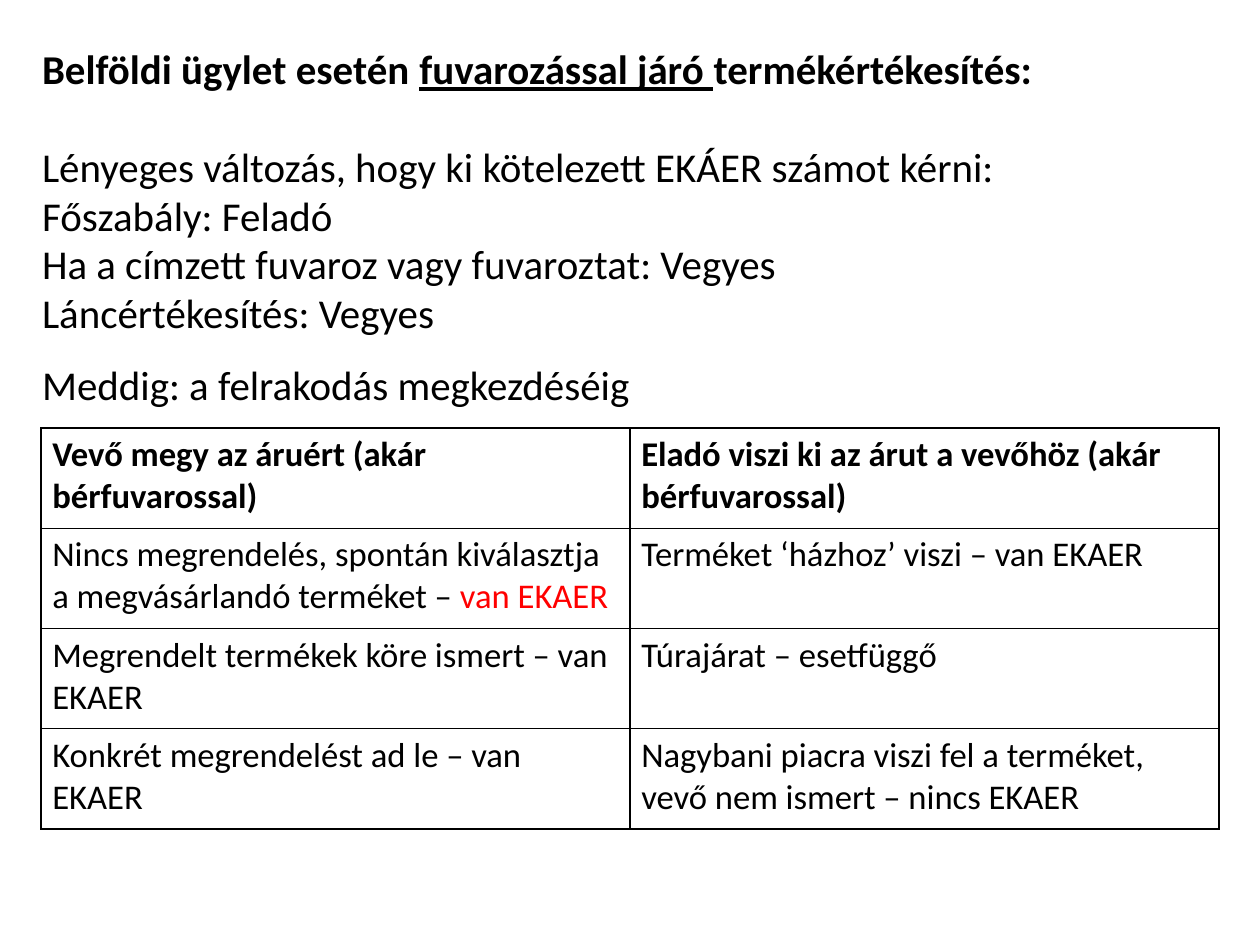
"""Build the slide on who must request an EKÁER number for domestic sales."""
from lxml import etree
from pptx import Presentation
from pptx import util as u
from pptx.dml.color import RGBColor
from pptx.enum import text
from pptx.oxml.ns import qn

PX = 914400 / 113.4
COLORS = {"ink": "000000", "accent": "FF0000", "paper": "FFFFFF"}


def px(length):
    return u.Emu(round(length * PX))


def add_run(paragraph, wording, size, color="ink", **formats):
    run = paragraph.add_run()
    run.text = wording
    values = {"name": "Calibri", "size": u.Pt(size), "bold": False, **formats}
    for key, value in values.items():
        setattr(run.font, key, value)
    run.font.color.rgb = RGBColor.from_string(COLORS[color])


presentation = Presentation()
presentation.slide_width, presentation.slide_height = px(1260), px(945)
slide = presentation.slides.add_slide(presentation.slide_layouts[0])
title = slide.shapes.title.element
title.getparent().remove(title)

rules = slide.placeholders[1]
box = {"left": 35, "top": 39, "width": 1201, "height": 874}
for key, value in box.items():
    setattr(rules, key, px(value))
frame = rules.text_frame
frame_format = {
    "word_wrap": True,
    "auto_size": text.MSO_AUTO_SIZE.NONE,
    "vertical_anchor": text.MSO_ANCHOR.TOP,
}
for side in ("left", "top", "right", "bottom"):
    frame_format[f"margin_{side}"] = px(7)
for key, value in frame_format.items():
    setattr(frame, key, value)

heading = [
    ("Belföldi ügylet esetén ", {"bold": True}),
    ("fuvarozással járó ", {"bold": True, "underline": True}),
    ("termékértékesítés:", {"bold": True}),
]
rule_lines = [
    (heading, 49),
    ([("Lényeges változás, hogy ki kötelezett EKÁER számot kérni:", {})], 0),
    ([("Főszabály: Feladó", {})], 0),
    ([("Ha a címzett fuvaroz vagy fuvaroztat: Vegyes", {})], 0),
    ([("Láncértékesítés: Vegyes", {})], 24),
    ([("Meddig: a felrakodás megkezdéséig", {})], 0),
]
for index, (runs, gap) in enumerate(rule_lines):
    paragraph = frame.add_paragraph() if index else frame.paragraphs[0]
    paragraph_format = {
        "alignment": text.PP_ALIGN.LEFT,
        "line_spacing": 0.99,
        "space_before": u.Pt(0),
        "space_after": px(gap),
    }
    for key, value in paragraph_format.items():
        setattr(paragraph, key, value)
    for wording, formats in runs:
        add_run(paragraph, wording, 26, **formats)

cases = [
    ("Vevő megy az áruért (akár bérfuvarossal)",
     "Eladó viszi ki az árut a vevőhöz (akár bérfuvarossal)"),
    ("Nincs megrendelés, spontán kiválasztja a megvásárlandó terméket – |van EKAER",
     "Terméket ‘házhoz’ viszi – van EKAER"),
    ("Megrendelt termékek köre ismert – van EKAER",
     "Túrajárat – esetfüggő"),
    ("Konkrét megrendelést ad le – van EKAER",
     "Nagybani piacra viszi fel a terméket, vevő nem ismert – nincs EKAER"),
]
table = slide.shapes.add_table(
    len(cases), 2, px(41), px(428), px(1178), px(401)).table
table.first_row = table.horz_banding = False

for row_index, case in enumerate(cases):
    for column_index, wording in enumerate(case):
        cell = table.cell(row_index, column_index)
        paragraph = cell.text_frame.paragraphs[0]
        plain, _, highlight = wording.partition("|")
        add_run(paragraph, plain, 22, bold=row_index == 0)
        if highlight:
            add_run(paragraph, highlight, 22, "accent")
        properties = cell._tc.get_or_add_tcPr()
        for edge in ("a:lnL", "a:lnR", "a:lnT", "a:lnB"):
            line = etree.SubElement(properties, qn(edge), w=str(u.Pt(1)))
            fill = etree.SubElement(line, qn("a:solidFill"))
            etree.SubElement(fill, qn("a:srgbClr"), val=COLORS["ink"])
        cell.fill.solid()
        cell.fill.fore_color.rgb = RGBColor.from_string(COLORS["paper"])

presentation.save("out.pptx")
